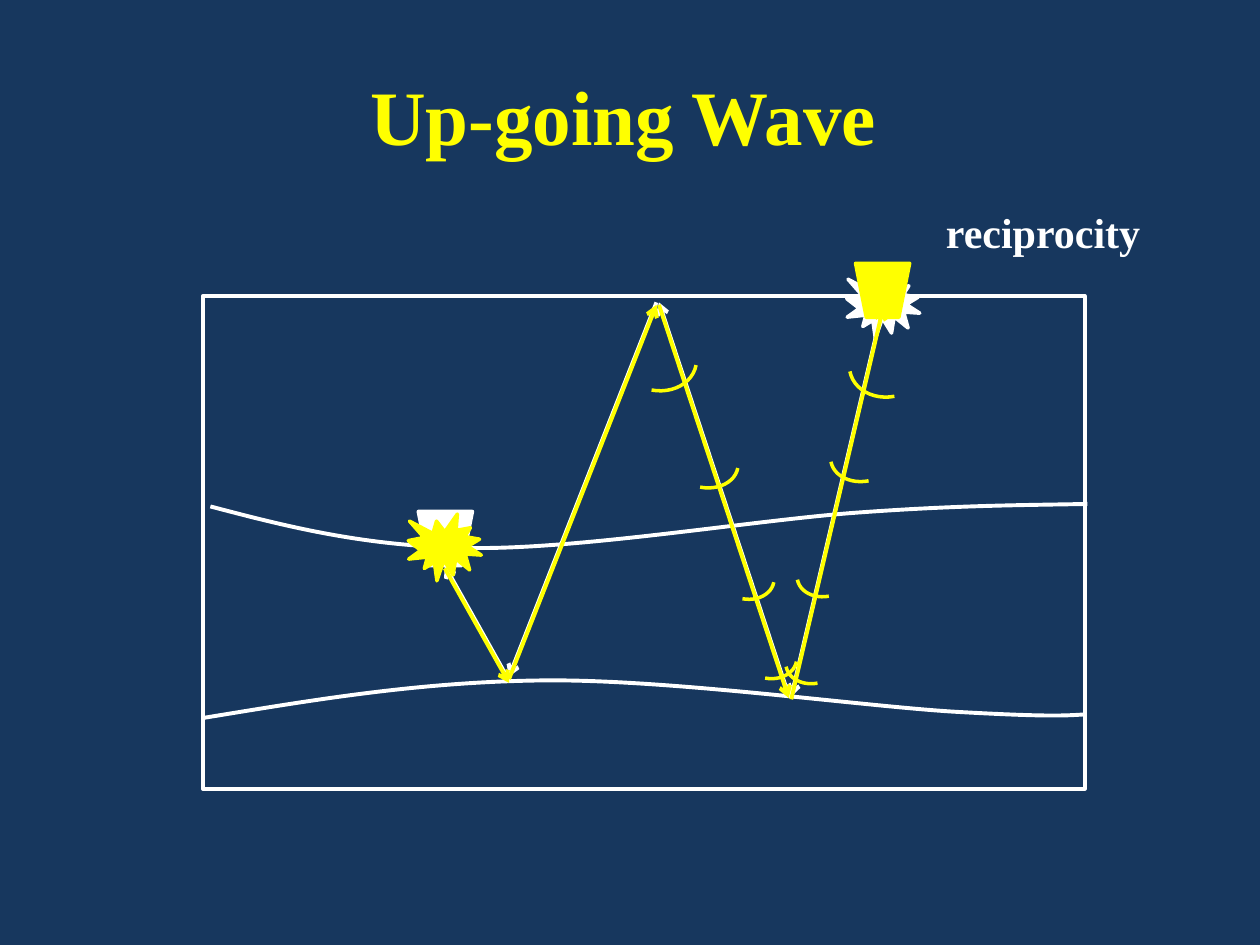
from lxml.etree import SubElement
from pptx import Presentation
from pptx.dml.color import RGBColor
from pptx.enum.shapes import MSO_CONNECTOR, MSO_SHAPE
from pptx.enum.text import MSO_ANCHOR
from pptx.oxml.ns import qn
from pptx.util import Inches, Pt

NAVY = RGBColor(0x17, 0x37, 0x5E)
WHITE = RGBColor(0xFF, 0xFF, 0xFF)
YELLOW = RGBColor(0xFF, 0xFF, 0x00)

# The slide is a grid of 100 columns by 75 rows of square cells.
COLUMNS, ROWS = 100, 75
CELL = Inches(0.1)

SEAL_SIZE = (5.8, 5.3)
RECEIVER_SIZE = (4.3, 4.3)
ARC_TURN = 100.8

# Ray legs from the surface point down to the buried point.
RAY_LEGS = [
    ((70.1, 24.2), (62.8, 55.3)),
    ((62.6, 55.2), (52.3, 24)),
    ((52.1, 24), (40.4, 53.7)),
    ((40.4, 54), (35.3, 44.9)),
]
REVERSED_RAY_DROP = 0.2

# Wavefront pairs: left arc position, right arc position, size.
WAVEFRONTS = [
    ((49.6, 25.3), (67.9, 25.8), (5.2, 6.2)),
    ((53.9, 34), (66.5, 33.5), (4.1, 5.3)),
    ((57.5, 43.6), (63.7, 43.4), (3.5, 4.4)),
    ((59.3, 49.9), (62.8, 50.3), (3.5, 4.4)),
]

# Each layer boundary: start point, then three points per Bezier piece.
UPPER_BOUNDARY = [
    (16.7, 40.2), (22.8, 41.8), (29, 43.4), (37.5, 43.5),
    (46.1, 43.6), (59.8, 41.3), (67.9, 40.7),
    (76, 40.1), (81.2, 40.1), (86.3, 40),
]
LOWER_BOUNDARY = [
    (16, 57), (24.6, 55.6), (33.2, 54.1), (43.2, 54),
    (53.2, 53.9), (68.8, 56.1), (76, 56.5),
    (83.1, 56.9), (84.6, 56.8), (86.1, 56.7),
]


def cells(*counts):
    return [round(count * CELL) for count in counts]


def set_line(item, color, width):
    item.line.color.rgb = color
    item.line.width = Pt(width)


def add_label(slide, text, position, size, points, color):
    label = slide.shapes.add_textbox(*cells(*position, *size))
    frame = label.text_frame
    frame.text = text
    frame.word_wrap = True
    frame.vertical_anchor = MSO_ANCHOR.BOTTOM
    font = frame.paragraphs[0].runs[0].font
    font.name = "Times New Roman"
    font.size = Pt(points)
    font.bold = True
    font.color.rgb = color


def add_figure(shapes, preset, position, size, color, filled=True, width=2):
    figure = shapes.add_shape(preset, *cells(*position, *size))
    figure.shadow.inherit = False
    if filled:
        figure.fill.solid()
        figure.fill.fore_color.rgb = color
    else:
        figure.fill.background()
    set_line(figure, color, width)
    return figure


def add_boundary(slide, points):
    """Draw a smooth open curve through cubic Bezier points."""
    builder = slide.shapes.build_freeform(*cells(*points[0]), scale=1.0)
    builder.add_line_segments([cells(*point) for point in points[1:]], close=False)
    boundary = builder.convert_to_shape()
    boundary.shadow.inherit = False
    boundary.fill.background()
    set_line(boundary, WHITE, 2.25)
    outline = next(boundary.element.iter(qn("a:path")))
    segments = outline.findall(qn("a:lnTo"))
    for first in range(0, len(segments), 3):
        curve = SubElement(outline, qn("a:cubicBezTo"))
        for segment in segments[first:first + 3]:
            curve.append(segment[0])
            outline.remove(segment)


def add_ray(shapes, start, end, color, arrow_end):
    ray = shapes.add_connector(MSO_CONNECTOR.STRAIGHT, *cells(*start, *end))
    set_line(ray, color, 2.25)
    SubElement(ray.line._get_or_add_ln(), qn(arrow_end), type="arrow")
    SubElement(ray.element.spPr, qn("a:effectLst"))


def add_ray_path(shapes, color, arrow_end, drop=0):
    for (x1, y1), (x2, y2) in RAY_LEGS:
        add_ray(shapes, (x1, y1 + drop), (x2, y2 + drop), color, arrow_end)


def add_wavefront_pair(slide, left, right, size):
    pair = slide.shapes.add_group_shape().shapes
    falling = add_figure(pair, MSO_SHAPE.ARC, left, size, YELLOW, filled=False)
    falling.rotation = ARC_TURN
    rising = add_figure(pair, MSO_SHAPE.ARC, right, size, YELLOW, filled=False)
    rising.rotation = 360 - ARC_TURN
    rising.element.spPr.xfrm.set("flipH", "1")


def main():
    presentation = Presentation()
    presentation.slide_width, presentation.slide_height = cells(COLUMNS, ROWS)
    slide = presentation.slides.add_slide(presentation.slide_layouts[6])
    slide.background.fill.solid()
    slide.background.fill.fore_color.rgb = NAVY

    add_label(slide, "Up-going Wave", (28.4, 4.9), (60.2, 8.4), 44, YELLOW)
    add_figure(slide.shapes, MSO_SHAPE.RECTANGLE, (16.1, 23.5), (70, 39.1),
               WHITE, filled=False, width=2.25)
    add_boundary(slide, UPPER_BOUNDARY)
    add_boundary(slide, LOWER_BOUNDARY)

    receiver, source = MSO_SHAPE.FLOWCHART_MANUAL_OPERATION, MSO_SHAPE.EXPLOSION1
    direct = slide.shapes.add_group_shape().shapes
    add_figure(direct, receiver, (33.2, 40.6), RECEIVER_SIZE, WHITE)
    add_ray_path(direct, WHITE, "a:tailEnd")
    add_figure(direct, source, (67.2, 21.6), SEAL_SIZE, WHITE)

    reciprocal = slide.shapes.add_group_shape().shapes
    add_ray_path(reciprocal, YELLOW, "a:headEnd", REVERSED_RAY_DROP)
    add_figure(reciprocal, source, (32.4, 40.8), SEAL_SIZE, YELLOW)
    add_figure(reciprocal, receiver, (67.9, 20.9), RECEIVER_SIZE, YELLOW)

    for left, right, size in WAVEFRONTS:
        add_wavefront_pair(slide, left, right, size)
    add_label(slide, "reciprocity", (74.1, 15.9), (20, 5), 24, WHITE)

    presentation.save("out.pptx")


if __name__ == "__main__":
    main()
